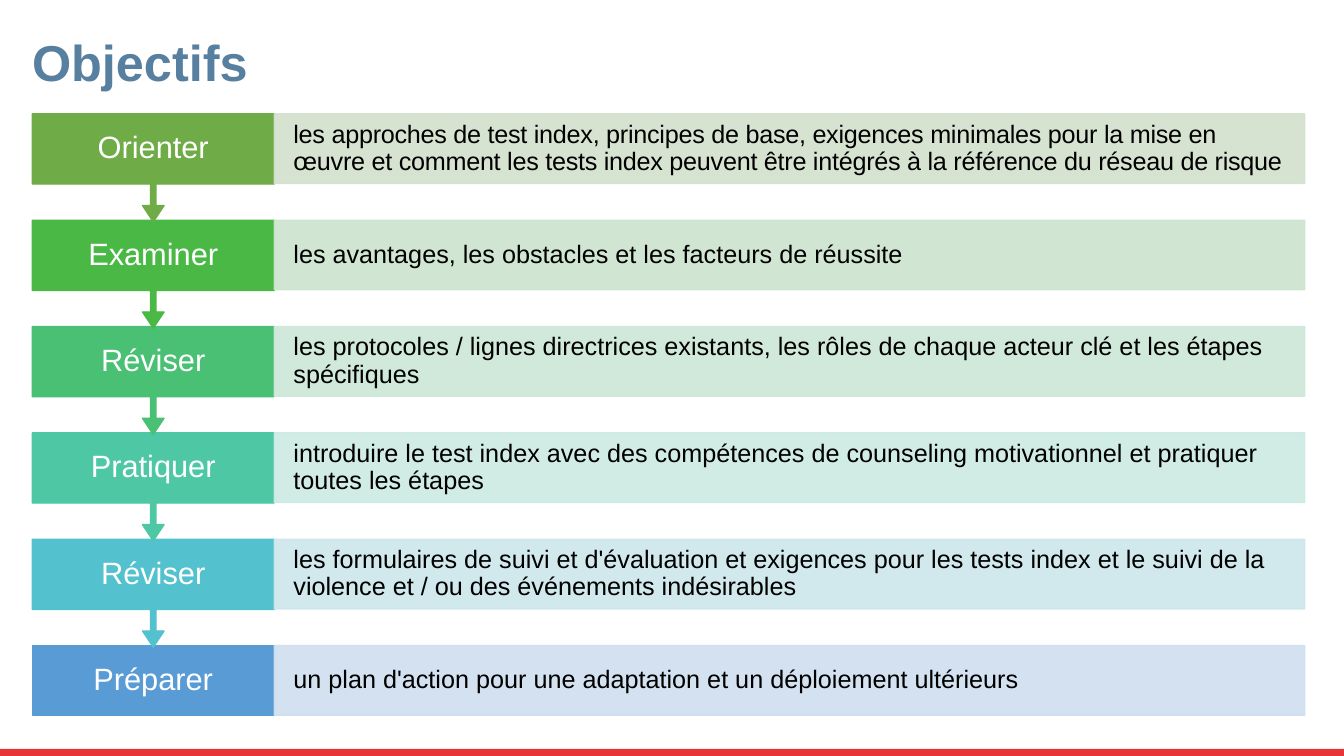
from lxml.etree import SubElement
from pptx import Presentation
from pptx.dml.color import RGBColor
from pptx.enum.shapes import MSO_SHAPE as Shape
from pptx.enum.text import MSO_ANCHOR as Anchor, PP_ALIGN as Align
from pptx.oxml.ns import qn
from pptx.util import Inches, Pt

STEPS = [
    ("Orienter", "6FAB46", "D3E1CC",
     "les approches de test index, principes de base, exigences minimales pour la mise en "
     "œuvre et comment les tests index peuvent être intégrés à la référence du réseau de risque"),
    ("Examiner", "49B845", "CCE4CE",
     "les avantages, les obstacles et les facteurs de réussite"),
    ("Réviser", "49C073", "CCE7D8",
     "les protocoles / lignes directrices existants, les rôles de chaque acteur clé "
     "et les étapes spécifiques"),
    ("Pratiquer", "4EC7A5", "CCEAE3",
     "introduire le test index avec des compétences de counseling motivationnel "
     "et pratiquer toutes les étapes"),
    ("Réviser", "53C1CE", "CDE6EC",
     "les formulaires de suivi et d'évaluation et exigences pour les tests index "
     "et le suivi de la violence et / ou des événements indésirables"),
    ("Préparer", "599BD5", "CFDEEF",
     "un plan d'action pour une adaptation et un déploiement ultérieurs"),
]
LEFT, SPLIT = 0.32, 2.72
LABEL_W, BODY_W = 2.4, 10.22
TOP, PITCH = 1.13, 1.055
BAND_H, CALL_H = 0.69, 1.07


def paint(color, hue, alpha=None):
    """Set a colour format to a hex colour, with opacity in percent if given."""
    color.rgb = RGBColor.from_string(hue)
    if alpha:
        for node in color._xFill.iter(qn("a:srgbClr")):
            SubElement(node, qn("a:alpha"), val=str(alpha * 1000))


def add_block(slide, kind, box, hue, alpha=None, lined=True):
    """Add a flat shape with a matching outline."""
    block = slide.shapes.add_shape(kind, *map(Inches, box))
    block.shadow.inherit = False
    block.fill.solid()
    paint(block.fill.fore_color, hue, alpha)
    if lined:
        block.line.width = Pt(1)
        block.line.fill.solid()
        paint(block.line.fill.fore_color, hue, alpha)
    else:
        block.line.fill.background()
    return block


def add_text(slide, box, text, size, hue, side=0.1, align=Align.LEFT, bold=False):
    """Add a vertically centred text box and return its run."""
    frame = slide.shapes.add_textbox(*map(Inches, box)).text_frame
    frame.word_wrap = True
    frame.vertical_anchor = Anchor.MIDDLE
    frame.margin_left = frame.margin_right = Inches(side)
    frame.text = text
    para = frame.paragraphs[0]
    para.alignment, para.line_spacing = align, 0.9
    run = para.runs[0]
    font = run.font
    font.name, font.size, font.bold = "Arial", Pt(size), bold
    paint(font.color, hue)
    return run


def add_step(slide, rank, label, dark, pale, text):
    """Add one step: a coloured label, its arrow down and its text band."""
    top = TOP + rank * PITCH
    name_box = (LEFT, top, LABEL_W, BAND_H)
    body_box = (SPLIT, top, BODY_W, BAND_H)
    if rank == len(STEPS) - 1:
        add_block(slide, Shape.RECTANGLE, name_box, dark)
    else:
        call = add_block(slide, Shape.UP_ARROW_CALLOUT, (LEFT, top, LABEL_W, CALL_H), dark)
        call.rotation = 180
        for i, value in enumerate((0.05, 0.1, 0.15, 0.65)):
            call.adjustments[i] = value
    add_text(slide, name_box, label, 22, "FFFFFF", 0.22, Align.CENTER)
    add_block(slide, Shape.RECTANGLE, body_box, pale, 90)
    run = add_text(slide, body_box, text, 18, "000000", 0.19)
    if rank == 0:
        run._r.get_or_add_rPr().set("spc", "-20")


def main():
    """Build the slide and save it."""
    deck = Presentation()
    deck.slide_width, deck.slide_height = Inches(13.33), Inches(7.5)
    slide = deck.slides.add_slide(deck.slide_layouts[6])
    add_block(slide, Shape.RECTANGLE, (0, 7.43, 13.33, 0.08), "E73439", lined=False)
    add_text(slide, (0.22, 0.21, 11.5, 0.87), "Objectifs", 36, "577F9F", bold=True)
    for rank, step in reversed(list(enumerate(STEPS))):
        add_step(slide, rank, *step)
    deck.save("out.pptx")


if __name__ == "__main__":
    main()
